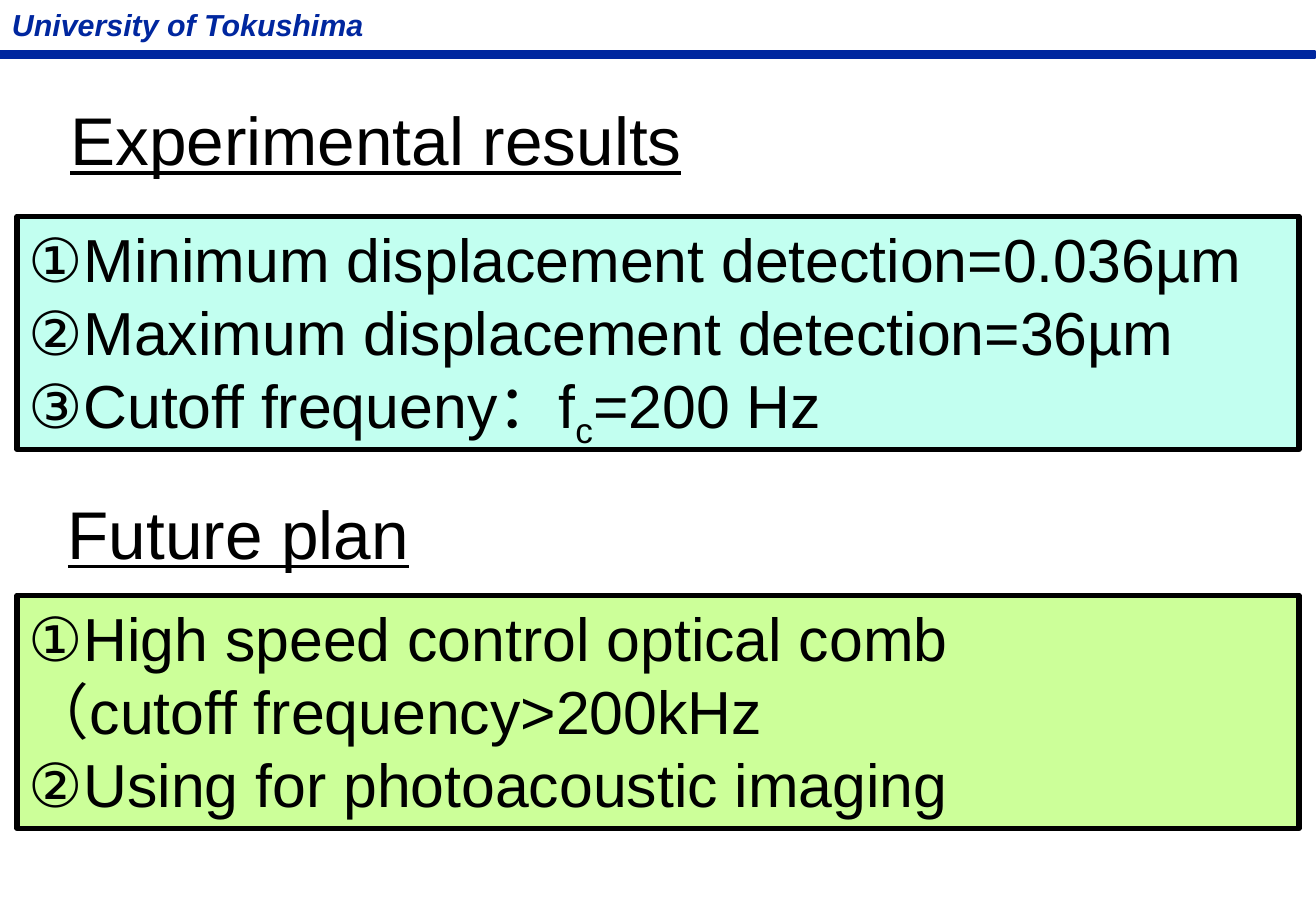
"""Build the slide of experimental results and future plan."""
from pptx import Presentation
from pptx.dml.color import RGBColor
from pptx.enum.shapes import MSO_SHAPE
from pptx.enum.text import MSO_ANCHOR, MSO_AUTO_SIZE, PP_ALIGN
from pptx.util import Inches, Pt

COLORS = {"navy": "00279F", "black": "000000", "aqua": "C2FFF0", "lime": "CCFF99"}


def write(shape, text, size, color="black", wrap=True, **style):
    """Fill a shape with text, one paragraph a line; parts between bars are subscripts."""
    frame = shape.text_frame
    frame.word_wrap = wrap
    frame.auto_size = MSO_AUTO_SIZE.NONE
    frame.vertical_anchor = MSO_ANCHOR.TOP
    for row, line in enumerate(text.split("\n")):
        para = frame.add_paragraph() if row else frame.paragraphs[0]
        para.alignment = PP_ALIGN.LEFT
        for spot, part in enumerate(line.split("|")):
            run = para.add_run()
            run.text = part
            run.font.name = "Arial"
            run.font.size = Pt(size)
            run.font.color.rgb = RGBColor.from_string(COLORS[color])
            for name, value in style.items():
                setattr(run.font, name, value)
            if spot % 2:
                run._r.get_or_add_rPr().set("baseline", "-25000")


def block(left, top, width, height, fill, line, weight):
    """Add a filled and outlined rectangle."""
    shape = slide.shapes.add_shape(
        MSO_SHAPE.RECTANGLE, Inches(left), Inches(top), Inches(width), Inches(height))
    shape.shadow.inherit = False
    shape.fill.solid()
    shape.fill.fore_color.rgb = RGBColor.from_string(COLORS[fill])
    shape.line.color.rgb = RGBColor.from_string(COLORS[line])
    shape.line.width = Pt(weight)
    return shape


deck = Presentation()
deck.slide_width, deck.slide_height = Inches(10.83), Inches(7.5)
slide = deck.slides.add_slide(deck.slide_layouts[5])

block(0, 0.42, 10.82, 0.06, "navy", "navy", 1)
school = slide.shapes.add_textbox(0, 0, Inches(3.18), Inches(0.4))
write(school, "University of Tokushima", 18, "navy", wrap=False, bold=True, italic=True)

title = slide.shapes.title
title.left, title.top = Inches(0.48), Inches(0.76)
title.width, title.height = Inches(8.16), Inches(0.77)
write(title, "Experimental results", 40, underline=True)

plan = slide.shapes.add_textbox(Inches(0.46), Inches(4), Inches(8.16), Inches(0.77))
write(plan, "Future plan", 40, underline=True)

panels = [
    (1.78, "aqua", "①Minimum displacement detection=0.036µm\n"
                   "②Maximum displacement detection=36µm\n"
                   "③Cutoff frequeny：f|c|=200 Hz"),
    (4.9, "lime", "①High speed control optical comb\n"
                  "（cutoff frequency>200kHz\n"
                  "②Using for photoacoustic imaging"),
]
for top, fill, text in panels:
    write(block(0.14, top, 10.55, 1.92, fill, "black", 3), text, 36)

deck.save("out.pptx")
